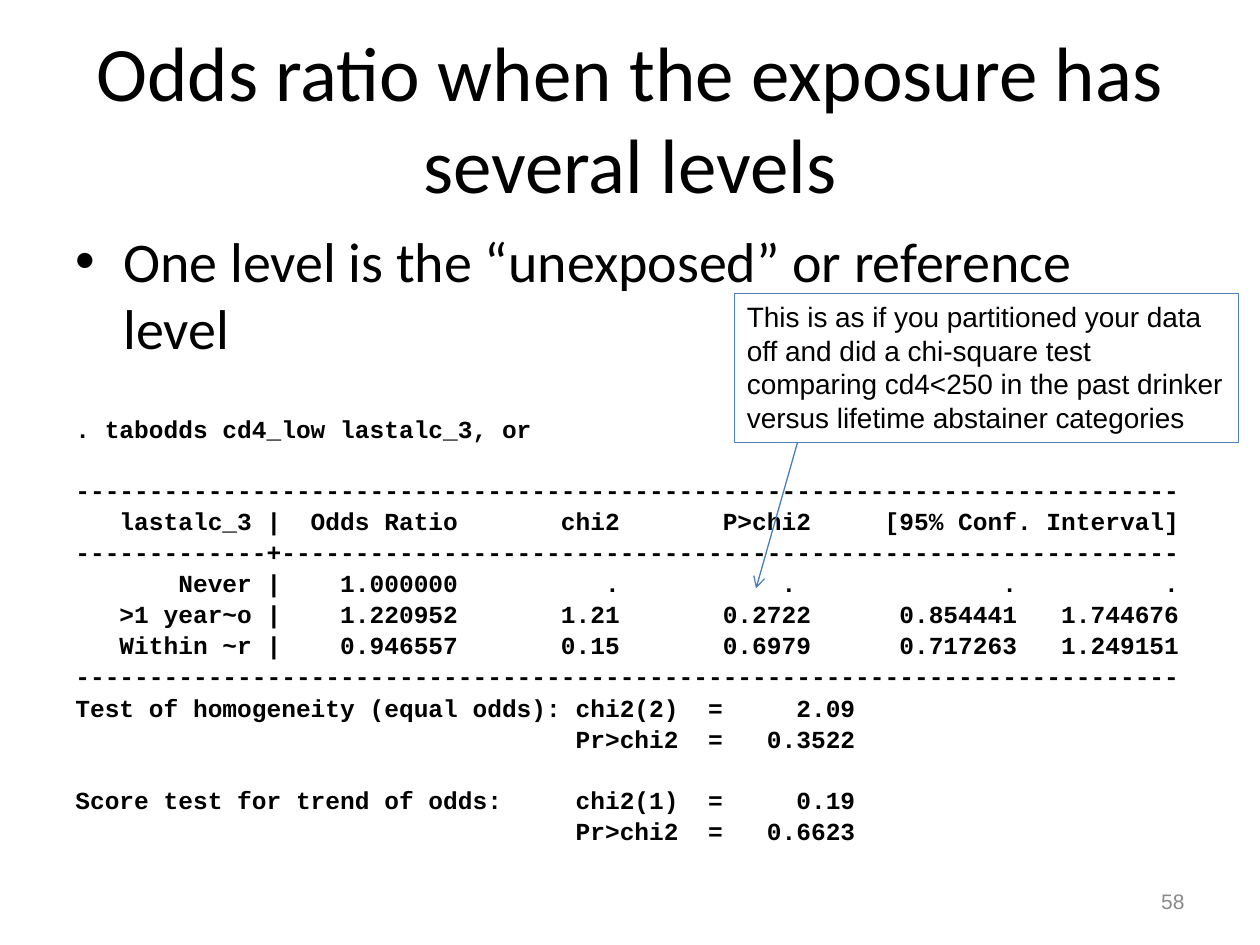
from dataclasses import dataclass

from lxml.etree import SubElement
from pptx import Presentation
from pptx.dml.color import RGBColor
from pptx.enum.shapes import MSO_CONNECTOR, MSO_SHAPE
from pptx.enum.text import MSO_ANCHOR, PP_ALIGN
from pptx.oxml.ns import qn
from pptx.util import Inches, Pt


@dataclass(frozen=True)
class Theme:
    text: RGBColor = RGBColor(0x00, 0x00, 0x00)
    muted: RGBColor = RGBColor(0x89, 0x89, 0x89)
    border: RGBColor = RGBColor(0x4F, 0x81, 0xBD)
    arrow: RGBColor = RGBColor(0x4B, 0x7E, 0xBC)
    heading_font: str = "Calibri"
    note_font: str = "Arial"
    console_font: str = "Courier New"
    title_size: Pt = Pt(44)
    bullet_size: Pt = Pt(32)
    note_size: Pt = Pt(16)
    console_size: Pt = Pt(14)
    number_size: Pt = Pt(12)
    line_width: Pt = Pt(0.75)


THEME = Theme()
RULE = "-" * 75

# Each block of console output is set off from the one above by a gap.
CONSOLE_BLOCKS = [
    (Pt(30), [". tabodds cd4_low lastalc_3, or"]),
    (Pt(18), [
        RULE,
        "   lastalc_3 |  Odds Ratio       chi2       P>chi2     [95% Conf. Interval]",
        "-" * 13 + "+" + "-" * 61,
        "       Never |    1.000000          .           .              .          .",
        "   >1 year~o |    1.220952       1.21       0.2722      0.854441   1.744676",
        "   Within ~r |    0.946557       0.15       0.6979      0.717263   1.249151",
        RULE,
        "Test of homogeneity (equal odds): chi2(2)  =     2.09",
        "                                  Pr>chi2  =   0.3522",
    ]),
    (Pt(18), [
        "Score test for trend of odds:     chi2(1)  =     0.19",
        "                                  Pr>chi2  =   0.6623",
    ]),
]


def set_text(paragraph, text, font_name, size, color=THEME.text, bold=False):
    paragraph.text = text
    font = paragraph.font
    font.name, font.size, font.bold = font_name, size, bold
    font.color.rgb = color


def add_text_frame(slide, left, top, width, height, anchor=MSO_ANCHOR.TOP):
    box = slide.shapes.add_textbox(
        Inches(left), Inches(top), Inches(width), Inches(height))
    frame = box.text_frame
    frame.word_wrap = True
    frame.vertical_anchor = anchor
    return frame


def add_bullet(paragraph):
    properties = paragraph._p.get_or_add_pPr()
    properties.set("marL", str(Inches(0.38)))
    properties.set("indent", str(-Inches(0.38)))
    SubElement(properties, qn("a:buFont"), typeface="Arial")
    SubElement(properties, qn("a:buChar"), char="•")


def add_title(slide, text):
    frame = add_text_frame(slide, 0.5, 0.3, 9, 1.25, MSO_ANCHOR.MIDDLE)
    paragraph = frame.paragraphs[0]
    paragraph.alignment = PP_ALIGN.CENTER
    set_text(paragraph, text, THEME.heading_font, THEME.title_size)


def add_body(slide, bullet_text, blocks):
    """Add the bullet and, below it, the console output."""
    frame = add_text_frame(slide, 0.5, 1.75, 9, 5.42)
    bullet = frame.paragraphs[0]
    set_text(bullet, bullet_text, THEME.heading_font, THEME.bullet_size)
    add_bullet(bullet)
    for gap, lines in blocks:
        for index, line in enumerate(lines):
            paragraph = frame.add_paragraph()
            set_text(paragraph, line, THEME.console_font,
                     THEME.console_size, bold=True)
            paragraph.space_before = Pt(1) if index else gap


def add_slide_number(slide, number):
    frame = add_text_frame(slide, 7.17, 6.95, 2.33, 0.4, MSO_ANCHOR.MIDDLE)
    paragraph = frame.paragraphs[0]
    paragraph.alignment = PP_ALIGN.RIGHT
    set_text(paragraph, number, THEME.note_font, THEME.number_size, THEME.muted)


def add_callout(slide, text):
    callout = slide.shapes.add_shape(
        MSO_SHAPE.RECTANGLE, Inches(5.83), Inches(2.33), Inches(4), Inches(1.18))
    callout.shadow.inherit = False
    callout.fill.background()
    callout.line.color.rgb = THEME.border
    callout.line.width = THEME.line_width
    frame = callout.text_frame
    frame.word_wrap = True
    frame.vertical_anchor = MSO_ANCHOR.TOP
    paragraph = frame.paragraphs[0]
    paragraph.alignment = PP_ALIGN.LEFT
    set_text(paragraph, text, THEME.note_font, THEME.note_size)


def add_arrow(slide, start, end):
    arrow = slide.shapes.add_connector(
        MSO_CONNECTOR.STRAIGHT, *map(Inches, start + end))
    arrow.line.color.rgb = THEME.arrow
    arrow.line.width = THEME.line_width
    SubElement(arrow.line._get_or_add_ln(), qn("a:tailEnd"), type="arrow")
    SubElement(arrow._element.spPr, qn("a:effectLst"))


def main():
    presentation = Presentation()
    presentation.slide_width = Inches(10)
    presentation.slide_height = Inches(7.5)
    slide = presentation.slides.add_slide(presentation.slide_layouts[6])

    add_title(slide, "Odds ratio when the exposure has several levels")
    add_body(slide, "One level is the “unexposed” or reference level",
             CONSOLE_BLOCKS)
    add_slide_number(slide, "58")
    add_callout(slide, "This is as if you partitioned your data off and did a "
                       "chi-square test comparing cd4<250 in the past drinker "
                       "versus lifetime abstainer categories")
    add_arrow(slide, (6.33, 3.51), (6, 4.67))

    presentation.save("out.pptx")


if __name__ == "__main__":
    main()
